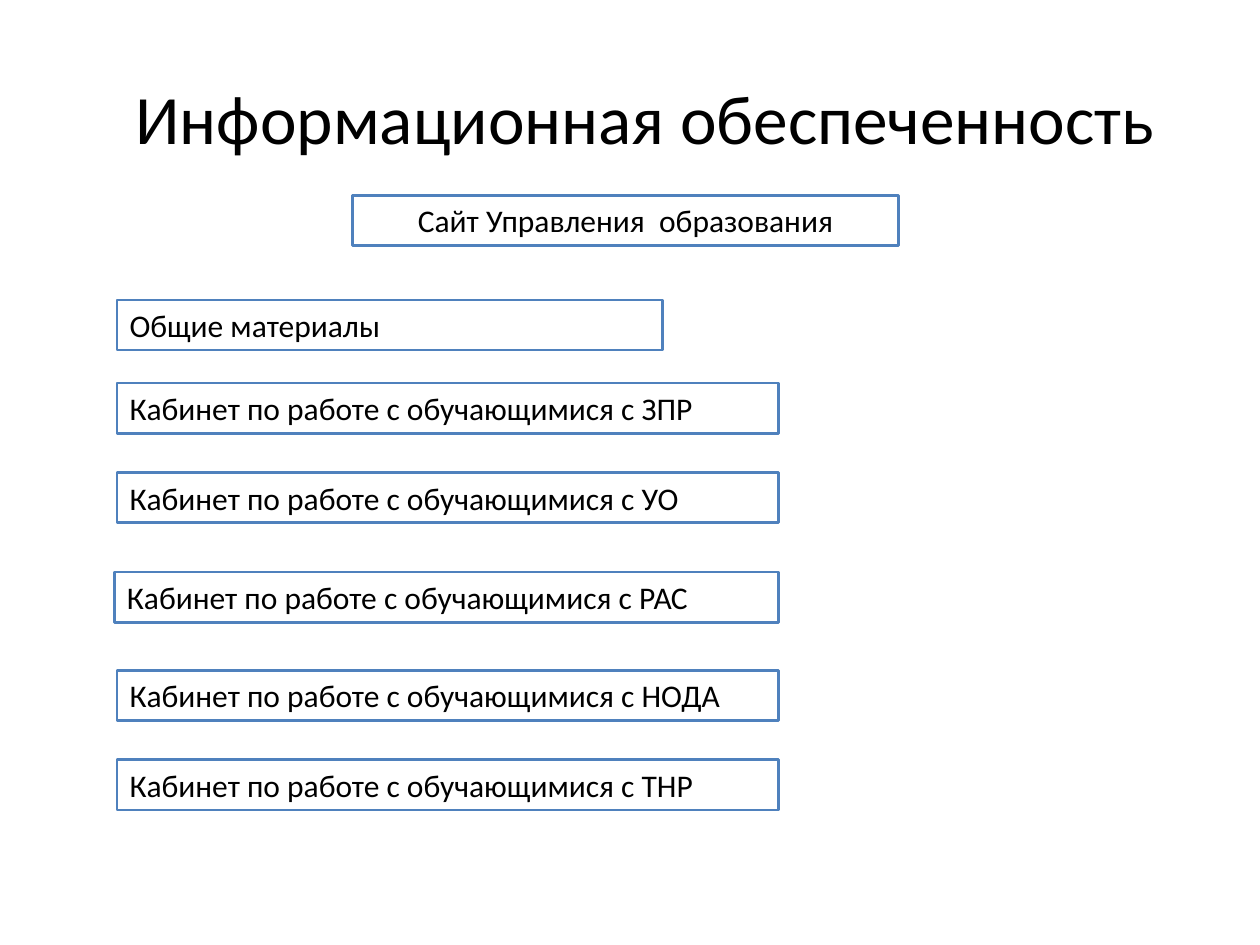
from pptx import Presentation
from pptx.dml.color import RGBColor
from pptx.enum.shapes import MSO_SHAPE
from pptx.enum.text import MSO_ANCHOR, MSO_AUTO_SIZE, PP_ALIGN
from pptx.util import Inches, Pt

TITLE = "Информационная обеспеченность"
SITE = "Сайт Управления  образования"
COMMON = "Общие материалы"
ROOM = "Кабинет по работе с обучающимися с "
ROOMS = [
    ("ЗПР", 0.93, 3.04),
    ("УО", 0.93, 3.75),
    ("РАС", 0.91, 4.54),
    ("НОДА", 0.93, 5.32),
    ("ТНР", 0.93, 6.03),
]
RIGHT = 6.18
HIGH = 0.4


def color(code):
    return RGBColor.from_string(code)


def write(frame, text, size=18, align=PP_ALIGN.LEFT, anchor=MSO_ANCHOR.TOP,
          fit=MSO_AUTO_SIZE.SHAPE_TO_FIT_TEXT):
    frame.word_wrap = True
    frame.auto_size = fit
    frame.vertical_anchor = anchor
    para = frame.paragraphs[0]
    para.alignment = align
    run = para.add_run()
    run.text = text
    run.font.name = "Calibri"
    run.font.size = Pt(size)
    run.font.color.rgb = color("000000")


def add_box(slide, text, left, top, width, **style):
    box = slide.shapes.add_shape(
        MSO_SHAPE.RECTANGLE, Inches(left), Inches(top), Inches(width), Inches(HIGH))
    box.shadow.inherit = False
    box.fill.background()
    box.line.color.rgb = color("4F81BD")
    box.line.width = Pt(1.5)
    write(box.text_frame, text, **style)


def main():
    deck = Presentation()
    deck.slide_width, deck.slide_height = Inches(10), Inches(7.5)
    slide = deck.slides.add_slide(deck.slide_layouts[5])

    title = slide.shapes.title
    title.left, title.top = Inches(0.43), Inches(0.3)
    title.width, title.height = Inches(9), Inches(1.25)
    title.text_frame.margin_left = Inches(0.48)
    write(title.text_frame, TITLE, size=39.6, align=PP_ALIGN.CENTER,
          anchor=MSO_ANCHOR.MIDDLE, fit=MSO_AUTO_SIZE.NONE)

    add_box(slide, SITE, 2.8, 1.55, 4.33, align=PP_ALIGN.CENTER)
    add_box(slide, COMMON, 0.93, 2.38, 4.33)
    for name, left, top in ROOMS:
        add_box(slide, ROOM + name, left, top, RIGHT - left)

    deck.save("out.pptx")


if __name__ == "__main__":
    main()
